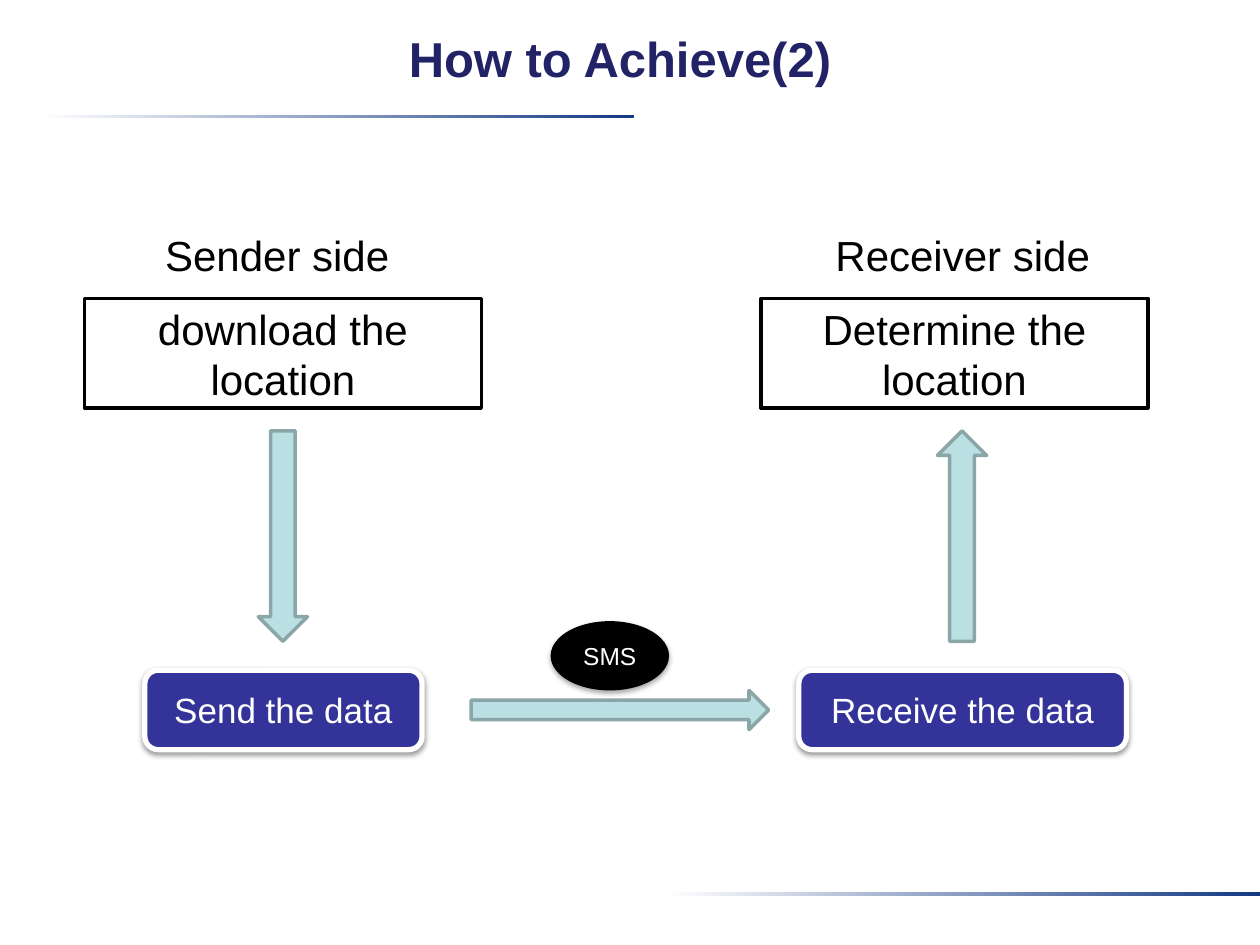
from lxml import etree
from pptx import Presentation, util as u
from pptx.dml.color import RGBColor
from pptx.enum import shapes, text
from pptx.oxml import ns

prs = Presentation()
prs.slide_width, prs.slide_height = u.Inches(10), u.Inches(7.5)
col, row = prs.slide_width / 100, prs.slide_height / 75
slide = prs.slides.add_slide(prs.slide_layouts[6])
kind = shapes.MSO_SHAPE


def rgb(value):
    return RGBColor.from_string(value)


def write(s, words, size, color, bold=False, wrap=True, anchor=text.MSO_ANCHOR.MIDDLE):
    tf = s.text_frame
    tf.word_wrap = wrap
    tf.vertical_anchor = anchor
    p = tf.paragraphs[0]
    p.alignment = text.PP_ALIGN.CENTER
    r = p.add_run()
    r.text = words
    r.font.name, r.font.size, r.font.bold = "Arial", u.Pt(size), bold
    r.font.color.rgb = rgb(color)
    return tf


for x, y in [(3.1, 9.1), (52.8, 70.8)]:
    s = slide.shapes.add_shape(kind.RECTANGLE, *map(int, (x * col, y * row, 47.2 * col, 0.3 * row)))
    s.shadow.inherit = False
    s.line.fill.background()
    s.fill.gradient()
    s.fill.gradient_angle = 0
    for stop, color in zip(s.fill.gradient_stops, ("FFFFFF", "133984")):
        stop.color.rgb = rgb(color)

labels = [
    ("How to Achieve(2)", 4.2, 1.7, 90, 12.5, 28, "222267", True, True),
    ("Sender side", 12, 17.7, 20, 5, 24, "000000", False, False),
    ("Receiver side", 65.2, 17.7, 22.4, 5, 24, "000000", False, False),
]
for words, x, y, w, h, size, color, bold, wrap in labels:
    s = slide.shapes.add_textbox(*map(int, (x * col, y * row, w * col, h * row)))
    tf = write(s, words, size, color, bold, wrap, text.MSO_ANCHOR.TOP)
    tf.margin_top = u.Inches(0.06 if bold else 0.05)

styles = {
    "step": ("FFFFFF", "000000", 2, 24, "000000", None),
    "arrow": ("BBE0E3", "8AA6A8", 2, None, None, None),
    "data": ("333399", "FFFFFF", 3, 20, "FFFFFF", (38, 1.6)),
    "channel": ("000000", None, None, 14, "FFFFFF", (35, 1.8)),
}
nodes = [
    (kind.RECTANGLE, "step", "download the location", 6.7, 23.7, 31.5, 8.7),
    (kind.DOWN_ARROW, "arrow", None, 20.5, 34.2, 3.9, 16.7),
    (kind.ROUNDED_RECTANGLE, "data", "Send the data", 11.5, 53.2, 22, 6.3),
    (kind.RIGHT_ARROW, "arrow", None, 37.4, 54.8, 23.6, 3.1),
    (kind.ROUNDED_RECTANGLE, "data", "Receive the data", 63.4, 53.2, 26, 6.3),
    (kind.UP_ARROW, "arrow", None, 74.4, 34.2, 3.9, 16.7),
    (kind.RECTANGLE, "step", "Determine the location", 60.4, 23.7, 30.7, 8.7),
    (kind.OVAL, "channel", "SMS", 43.7, 49.3, 9.4, 5.5),
]
for shape, style, words, x, y, w, h in nodes:
    fill, line, width, size, color, shadow = styles[style]
    s = slide.shapes.add_shape(shape, *map(int, (x * col, y * row, w * col, h * row)))
    s.shadow.inherit = False
    s.fill.solid()
    s.fill.fore_color.rgb = rgb(fill)
    if line:
        s.line.color.rgb = rgb(line)
        s.line.width = u.Pt(width)
    else:
        s.line.fill.background()
    if words:
        write(s, words, size, color)
    if shadow:
        alpha, distance = shadow
        effects = s._element.spPr.find(ns.qn("a:effectLst"))
        outer = etree.SubElement(effects, ns.qn("a:outerShdw"), blurRad=str(u.Pt(3.1)),
                                 dist=str(u.Pt(distance)), dir="5400000", rotWithShape="0")
        black = etree.SubElement(outer, ns.qn("a:srgbClr"), val="000000")
        etree.SubElement(black, ns.qn("a:alpha"), val=str(alpha * 1000))

prs.save("out.pptx")
